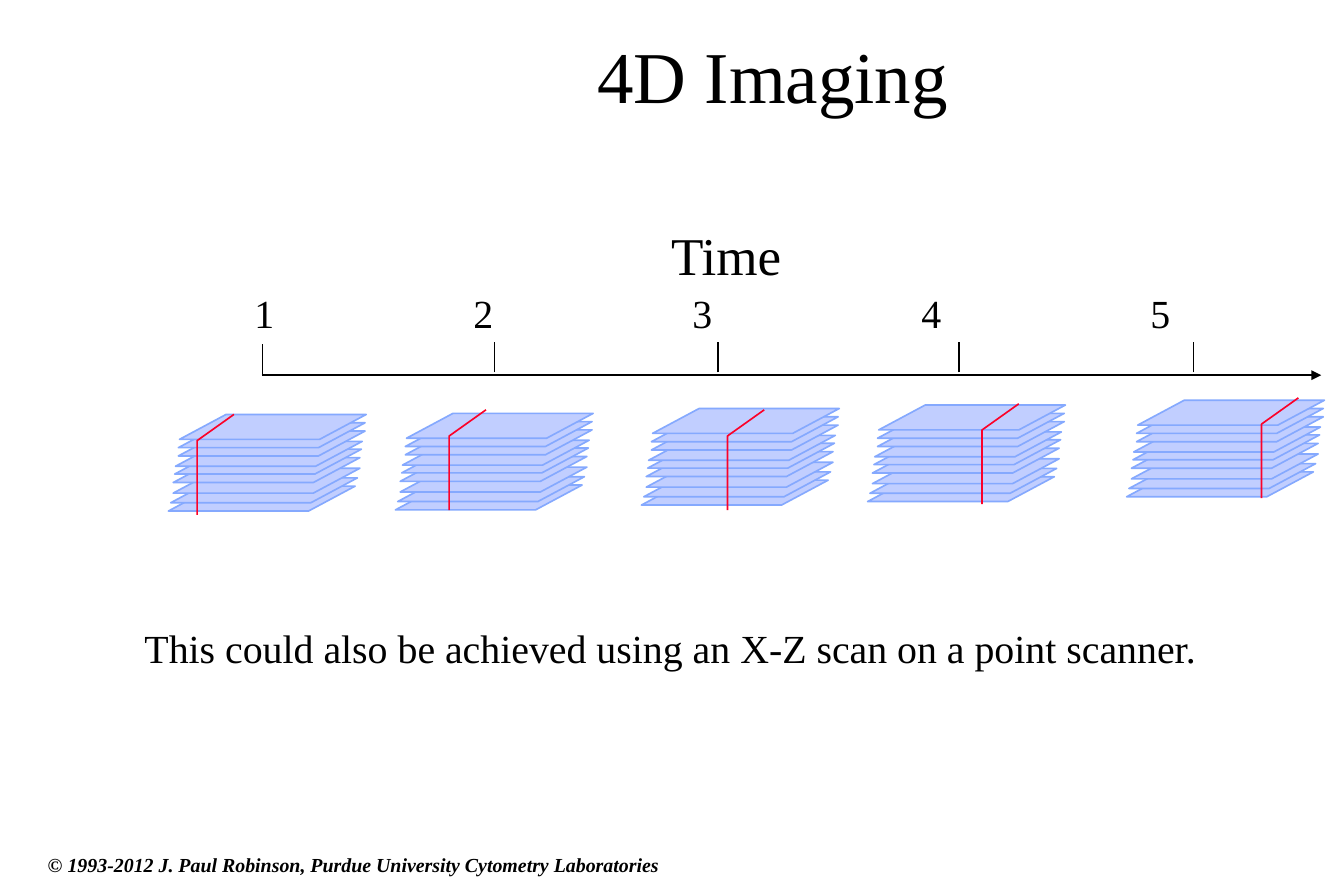
import dataclasses

import lxml.etree
import pptx
import pptx.dml.color
import pptx.enum.shapes
import pptx.enum.text
import pptx.oxml.ns
import pptx.util

Pt = pptx.util.Pt
RGB = pptx.dml.color.RGBColor
ALIGN = pptx.enum.text.PP_ALIGN
ANCHOR = pptx.enum.text.MSO_ANCHOR
qn = pptx.oxml.ns.qn


@dataclasses.dataclass(frozen=True)
class Theme:
    font: str = "Times New Roman"
    ink: RGB = RGB(0x00, 0x00, 0x00)
    sheet: RGB = RGB(0xC1, 0xCE, 0xFF)
    edge: RGB = RGB(0x85, 0xA9, 0xFE)
    scan: RGB = RGB(0xFC, 0x01, 0x28)
    title: int = 44
    heading: int = 32
    body: int = 24
    footer: int = 12
    line: int = 1


class Deck:
    """Draws styled elements on the current slide, with lengths in points."""

    def __init__(self, prs, theme):
        self.theme = theme
        self.s = prs.slides.add_slide(prs.slide_layouts[6])

    def text(self, text, x, y, w, h, size, align=ALIGN.LEFT,
             anchor=ANCHOR.TOP, strong=False, tabs=()):
        sp = self.s.shapes.add_textbox(Pt(x), Pt(y), Pt(w), Pt(h))
        tf = sp.text_frame
        tf.word_wrap = True
        tf.vertical_anchor = anchor
        p = tf.paragraphs[0]
        p.text = text
        p.alignment = align
        if tabs:
            stops = lxml.etree.SubElement(p._p.get_or_add_pPr(), qn("a:tabLst"))
            for stop in tabs:
                lxml.etree.SubElement(stops, qn("a:tab"), pos=str(Pt(stop)), algn="l")
        p.font.name = self.theme.font
        p.font.size = Pt(size)
        p.font.bold = p.font.italic = strong
        p.font.color.rgb = self.theme.ink

    def outline(self, sp, color):
        sp.line.color.rgb = color
        sp.line.width = Pt(self.theme.line)

    def line(self, x1, y1, x2, y2, arrow=False):
        sp = self.s.shapes.add_connector(
            pptx.enum.shapes.MSO_CONNECTOR.STRAIGHT, Pt(x1), Pt(y1), Pt(x2), Pt(y2))
        self.outline(sp, self.theme.ink)
        if arrow:
            lxml.etree.SubElement(sp.line._get_or_add_ln(), qn("a:tailEnd"), type="triangle")
        lxml.etree.SubElement(sp._element.spPr, qn("a:effectLst"))

    def sheet(self, x, y):
        sp = self.s.shapes.add_shape(
            pptx.enum.shapes.MSO_SHAPE.PARALLELOGRAM, Pt(x), Pt(y), Pt(112.5), Pt(15))
        sp.adjustments[0] = 1.87
        sp.shadow.inherit = False
        sp.fill.solid()
        sp.fill.fore_color.rgb = self.theme.sheet
        self.outline(sp, self.theme.edge)

    def scan(self, x, y):
        builder = self.s.shapes.build_freeform(Pt(x + 22.2), Pt(y), scale=1.0)
        builder.add_line_segments(
            [(Pt(x), Pt(y + 15.8)), (Pt(x), Pt(y + 60.5))], close=False)
        sp = builder.convert_to_shape()
        sp.shadow.inherit = False
        sp.fill.background()
        self.outline(sp, self.theme.scan)


SHEET_OFFSETS = [(0, 0), (1.4, 5), (2.9, 10.8), (2.9, 17.2), (3.8, 22.3),
                 (4.3, 27), (6, 33.2), (6, 38.2), (6.7, 43.2)]
STACKS = [(101.5, 293), (238.3, 292.3), (386.6, 289.4), (522.9, 287.3), (679, 284.4)]
SCANS = [(118.8, 249.8), (270.7, 247), (438.4, 247), (591.8, 243.4), (760.3, 239.8)]
TICKS = [(158.2, 207.2), (298, 206), (432.7, 206), (578, 206), (719.3, 206)]


def main():
    prs = pptx.Presentation()
    prs.slide_width, prs.slide_height = Pt(810), Pt(540)
    theme = Theme()
    deck = Deck(prs, theme)

    deck.text("© 1993-2012 J. Paul Robinson, Purdue University Cytometry Laboratories",
              21.7, 510.5, 396, 21.6, theme.footer, strong=True)
    deck.text("4D Imaging", 121.7, 0, 688.3, 90, theme.title,
              align=ALIGN.CENTER, anchor=ANCHOR.MIDDLE)
    deck.text("Time", 397.4, 130.3, 92.2, 45.4, theme.heading)
    deck.text("1\t2\t3\t4\t5", 146.2, 170.6, 637.2, 36, theme.body,
              tabs=(132, 264, 402, 540))
    deck.line(157.7, 226.1, 796.3, 226.1, arrow=True)
    for x, top in TICKS:
        deck.line(x, top + 18.5, x, top)
    for x, y in STACKS:
        for right, up in SHEET_OFFSETS:
            deck.sheet(x + right, y - up)
    for x, y in SCANS:
        deck.scan(x, y)
    deck.text("This could also be achieved using an X-Z scan on a point scanner.",
              80, 372.2, 730, 36, theme.body)

    prs.save("out.pptx")


if __name__ == "__main__":
    main()
